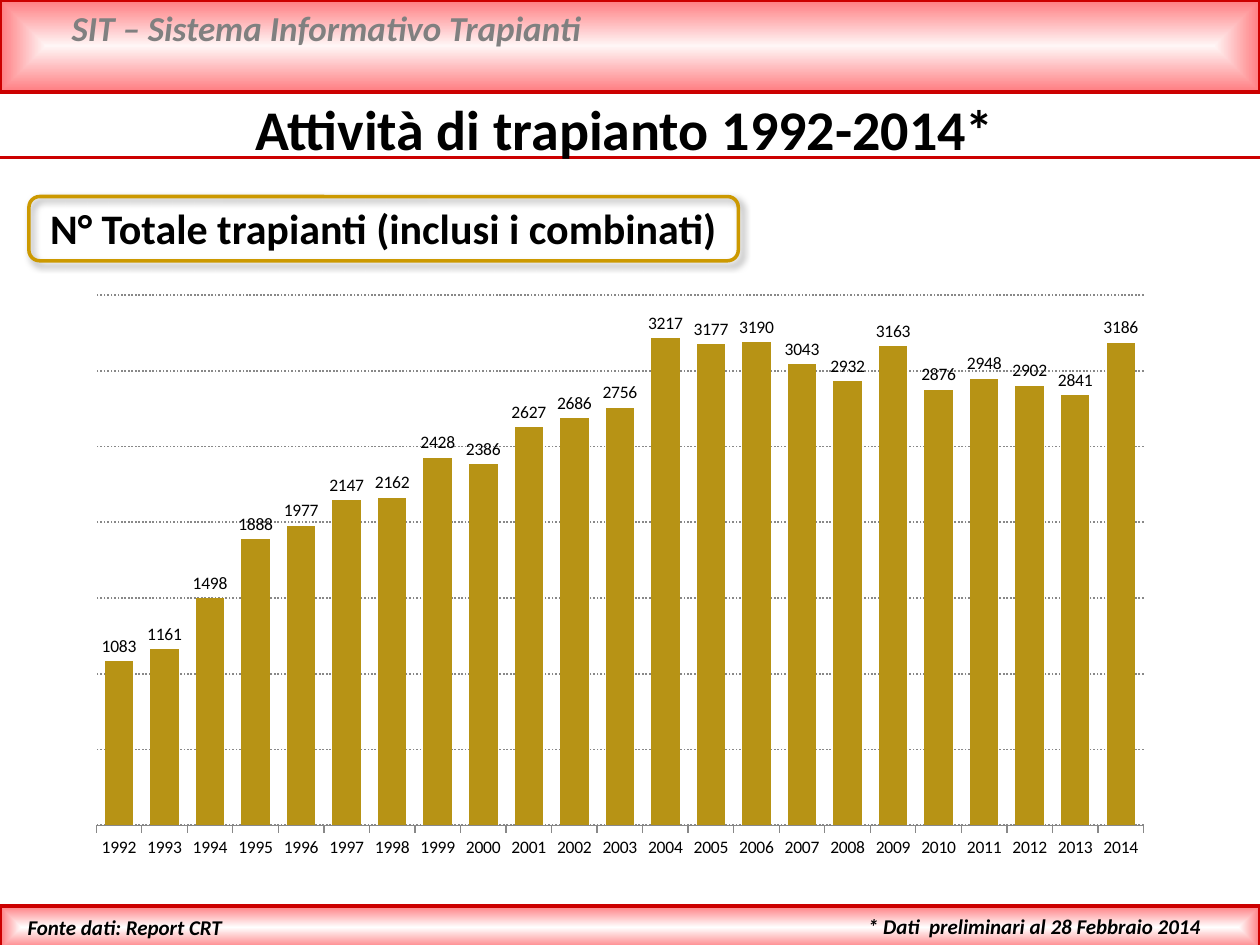
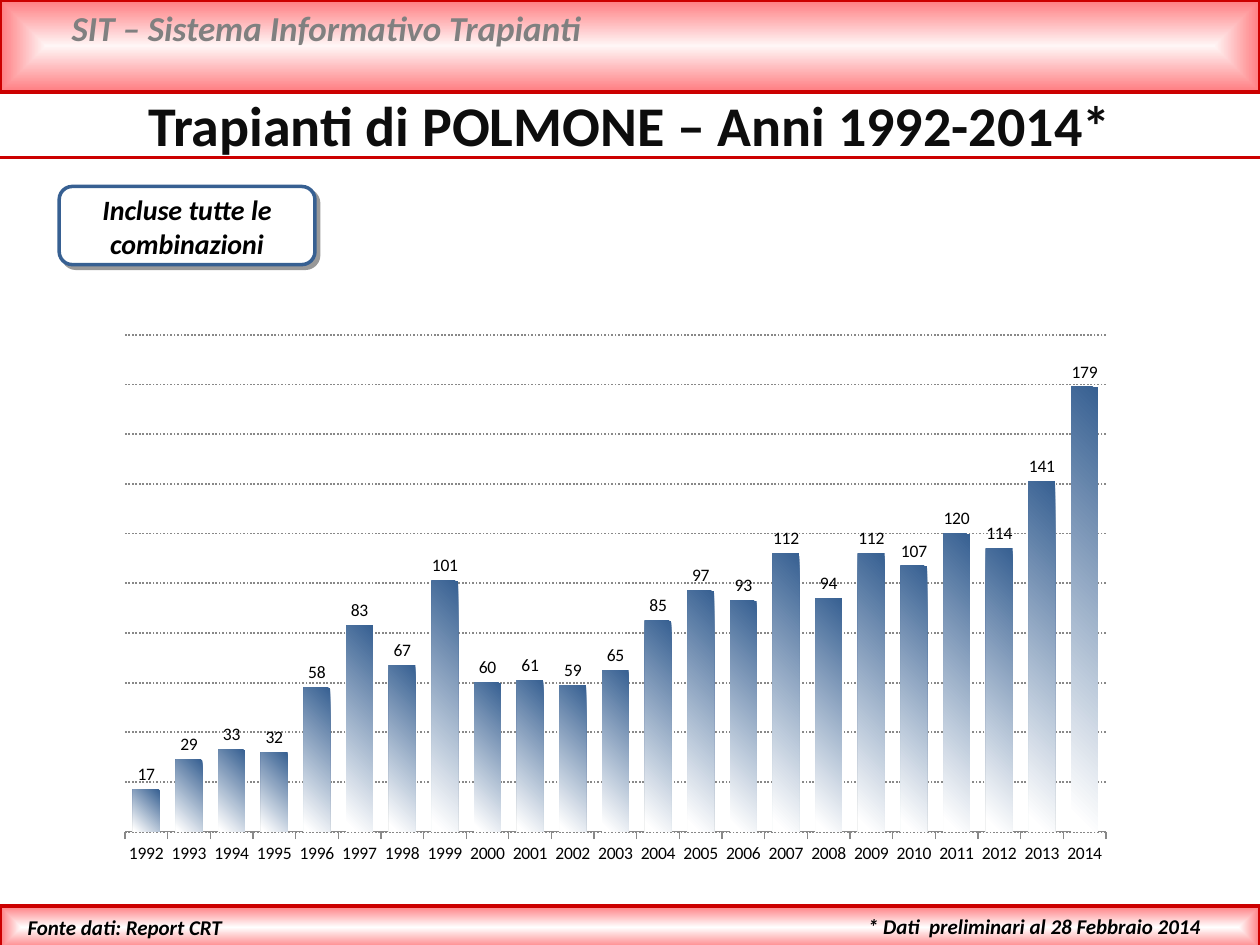
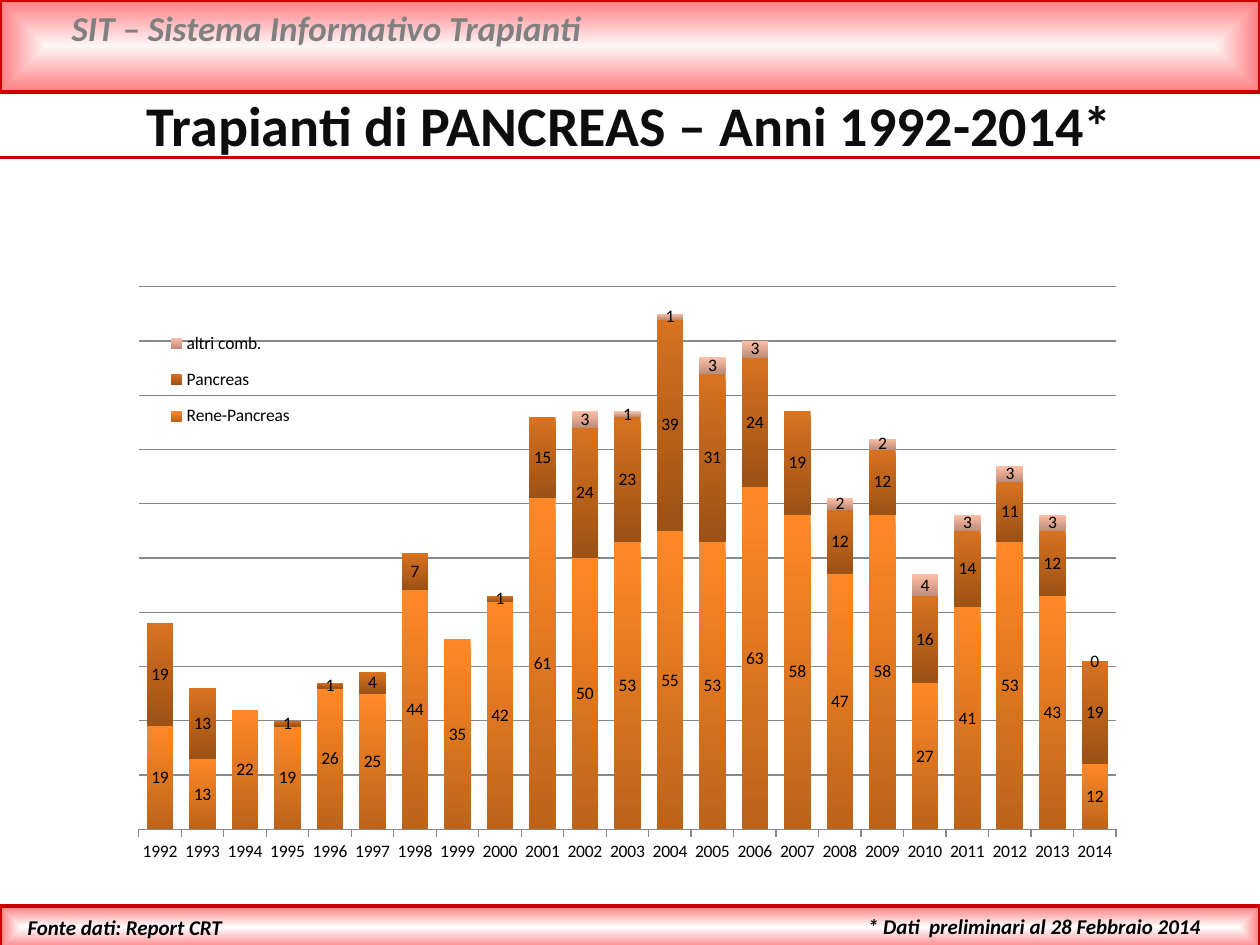
"""Build three slides on transplant activity in Italy, 1992-2014."""
from dataclasses import dataclass
from typing import NamedTuple, Optional

from lxml import etree
from pptx import Presentation
from pptx import util as u
from pptx.chart import data as chart_data
from pptx.dml import color as dml_color
from pptx.enum import chart as charts
from pptx.enum import dml, shapes, text
from pptx.oxml import ns

FONT = "Calibri"
CELL = u.Inches(0.1)
COLUMNS, ROWS = 100, 75
YEARS = [str(year) for year in range(1992, 2015)]
DOWNWARD, DOWN_LEFT = 270, 225
COLORS = {
    "white": "FFFFFF", "black": "000000", "title": "0D0D0D", "header": "808080",
    "red": "CC0000", "pink": "FF7C80", "pale pink": "FFF6F6", "grid": "888888",
    "gold": "CC9900", "gold bar": "B79315", "blue": "376092",
    "orange": "FF8826", "dark orange": "BC641A",
    "rust": "D8721F", "dark rust": "9C5115",
    "salmon": "FFBFA6", "dark salmon": "BE8E7C",
}


class Area(NamedTuple):
    """A rectangle in grid columns and rows, or in shares of a chart."""
    left: float
    top: float
    width: float
    height: float

    def lengths(self) -> list:
        """Return the four grid measures as slide lengths."""
        return [round(value * CELL) for value in self]


PLOT_SHARE = Area(0.02, 0.02, 0.96, 0.905)
LEGEND_SHARE = Area(0.04, 0.07, 0.14, 0.21)


@dataclass(frozen=True)
class Label:
    """A text box in one style."""
    words: str
    area: Area
    size: int
    color: str = "black"
    italic: bool = False
    centred: bool = False


@dataclass(frozen=True)
class Frame:
    """A rounded frame with a soft shadow."""
    area: Area
    line: str
    blur: int
    fill: Optional[str] = None


@dataclass(frozen=True)
class Bars:
    """One series of bars, in a plain colour or a gradient of two."""
    name: str
    values: list
    colors: tuple
    angle: int = DOWNWARD
    end: float = 1.0


@dataclass(frozen=True)
class Columns:
    """A column chart by year."""
    area: Area
    series: list
    top: int
    step: int
    stacked: bool = False


@dataclass(frozen=True)
class Page:
    """The content of one slide."""
    title: Label
    chart: Columns
    frame: Optional[Frame] = None
    note: Optional[Label] = None


BANDS = [(Area(0, 0, COLUMNS, 7.3), "pale pink"), (Area(0, 71.9, COLUMNS, 3.4), "white")]
SHARED_LABELS = [
    Label("SIT – Sistema Informativo Trapianti", Area(4.7, 0, 89.8, 4.4), 20, "header", True),
    Label("* Dati  preliminari al 28 Febbraio 2014", Area(67.9, 72, 32.1, 3), 12, italic=True),
    Label("Fonte dati: Report CRT", Area(1.2, 72.1, 32.1, 3), 12, italic=True),
]


def organ_title(organ: str) -> Label:
    """Return the title of a slide about one organ."""
    return Label(f"Trapianti di {organ} – Anni 1992-2014*", Area(0, 6.7, COLUMNS, 6.4),
                 32, "title", centred=True)


PAGES = [
    Page(
        Label("Attività di trapianto 1992-2014*", Area(0, 7, 99.2, 6.4), 32, centred=True),
        Columns(Area(5.9, 22.5, 86.6, 46.5), [
            Bars("Series 1", [1083, 1161, 1498, 1888, 1977, 2147, 2162, 2428, 2386, 2627, 2686,
                              2756, 3217, 3177, 3190, 3043, 2932, 3163, 2876, 2948, 2902, 2841,
                              3186], ("gold bar",)),
        ], 3500, 500),
        Frame(Area(2.3, 15.6, 56.3, 5.1), "gold", 4),
        Label("N° Totale trapianti (inclusi i combinati)", Area(3, 15.6, 55.6, 5.1), 24),
    ),
    Page(
        organ_title("POLMONE"),
        Columns(Area(8.3, 25.7, 81.1, 43.6), [
            Bars("Series 1", [17, 29, 33, 32, 58, 83, 67, 101, 60, 61, 59, 65, 85, 97, 93, 112,
                              94, 112, 107, 120, 114, 141, 179],
                 ("blue", "white"), DOWN_LEFT, 0.96),
        ], 200, 20),
        Frame(Area(4.7, 14.8, 20.3, 6.2), "blue", 0, "white"),
        Label("Incluse tutte le combinazioni", Area(4.7, 14.8, 20.3, 6.4), 16,
              italic=True, centred=True),
    ),
    Page(
        organ_title("PANCREAS"),
        Columns(Area(9.4, 21.8, 80.8, 47.6), [
            Bars("Rene-Pancreas", [19, 13, 22, 19, 26, 25, 44, 35, 42, 61, 50, 53, 55, 53, 63,
                                   58, 47, 58, 27, 41, 53, 43, 12], ("orange", "dark orange")),
            Bars("Pancreas", [19, 13, None, 1, 1, 4, 7, None, 1, 15, 24, 23, 39, 31, 24, 19, 12,
                              12, 16, 14, 11, 12, 19], ("rust", "dark rust")),
            Bars("altri comb.", [None] * 10 + [3, 1, 1, 3, 3, None, 2, 2, 4, 3, 3, 3, 0],
                 ("salmon", "dark salmon")),
        ], 100, 10, stacked=True),
    ),
]


def rgb(name: str) -> dml_color.RGBColor:
    """Return a named colour."""
    return dml_color.RGBColor.from_string(COLORS[name])


def draw_line(line, color: str, width: float) -> None:
    """Set the colour and width of a line."""
    line.color.rgb = rgb(color)
    line.width = u.Pt(width)


def paint(fill, colors: tuple, angle: int = DOWNWARD, end: float = 1.0) -> None:
    """Fill with one colour, or with a gradient between two."""
    if len(colors) == 1:
        fill.solid()
        fill.fore_color.rgb = rgb(colors[0])
        return
    fill.gradient()
    fill.gradient_angle = angle
    for stop, color, position in zip(fill.gradient_stops, colors, (0, end)):
        stop.color.rgb = rgb(color)
        stop.position = position


def add_band(slide, area: Area, centre: str) -> None:
    """Draw a band whose colour runs from its centre to its edges."""
    band = slide.shapes.add_shape(shapes.MSO_SHAPE.RECTANGLE, *area.lengths())
    band.shadow.inherit = False
    draw_line(band.line, "red", 2)
    paint(band.fill, (centre, "pink"))
    gradient = band.element.spPr.find(ns.qn("a:gradFill"))
    gradient.remove(gradient.find(ns.qn("a:lin")))
    route = etree.SubElement(gradient, ns.qn("a:path"), {"path": "shape"})
    etree.SubElement(route, ns.qn("a:fillToRect"), dict.fromkeys("ltrb", "50000"))


def add_rule(slide) -> None:
    """Draw the red rule under the title."""
    row = round(12.5 * CELL)
    rule = slide.shapes.add_connector(shapes.MSO_CONNECTOR.STRAIGHT, 0, row, COLUMNS * CELL, row)
    draw_line(rule.line, "red", 2)
    etree.SubElement(rule.element.spPr, ns.qn("a:effectLst"))


def add_label(slide, label: Label) -> None:
    """Write a bold text box."""
    box = slide.shapes.add_textbox(*label.area.lengths())
    frame = box.text_frame
    frame.word_wrap = True
    frame.auto_size = text.MSO_AUTO_SIZE.SHAPE_TO_FIT_TEXT
    para = frame.paragraphs[0]
    para.text = label.words
    para.alignment = text.PP_ALIGN.CENTER if label.centred else text.PP_ALIGN.LEFT
    font = para.font
    font.name, font.size, font.bold, font.italic = FONT, u.Pt(label.size), True, label.italic
    font.color.rgb = rgb(label.color)


def add_frame(slide, frame: Frame) -> None:
    """Draw a rounded frame and its shadow."""
    box = slide.shapes.add_shape(shapes.MSO_SHAPE.ROUNDED_RECTANGLE, *frame.area.lengths())
    box.shadow.inherit = False
    if frame.fill:
        paint(box.fill, (frame.fill,))
    else:
        box.fill.background()
    draw_line(box.line, frame.line, 2)
    effects = box.element.spPr.find(ns.qn("a:effectLst"))
    shadow = etree.SubElement(effects, ns.qn("a:outerShdw"), {
        "blurRad": str(u.Pt(frame.blur)), "dist": str(u.Pt(3)), "dir": "2700000",
        "algn": "tl", "rotWithShape": "0"})
    tone = etree.SubElement(shadow, ns.qn("a:srgbClr"), {"val": COLORS["black"]})
    etree.SubElement(tone, ns.qn("a:alpha"), {"val": "40000"})


def set_layout(parent, index: int, area: Area, inner: bool = False) -> None:
    """Fix the place of a chart part in shares of the chart."""
    old = parent.find(ns.qn("c:layout"))
    if old is not None:
        parent.remove(old)
    layout = etree.Element(ns.qn("c:layout"))
    manual = etree.SubElement(layout, ns.qn("c:manualLayout"))
    settings = {"layoutTarget": "inner"} if inner else {}
    settings |= {"xMode": "edge", "yMode": "edge"}
    settings |= {key: str(value) for key, value in zip("xywh", area)}
    for key, value in settings.items():
        etree.SubElement(manual, ns.qn(f"c:{key}"), {"val": value})
    parent.insert(index, layout)


def style_axes(chart, columns: Columns) -> None:
    """Show the years, and only the gridlines of the value axis."""
    years = chart.category_axis
    years.major_tick_mark = charts.XL_TICK_MARK.OUTSIDE
    years.has_major_gridlines = False
    draw_line(years.format.line, "grid", 0.75)
    values = chart.value_axis
    values.visible = False
    values.minimum_scale, values.maximum_scale = 0, columns.top
    values.major_unit = columns.step
    values.has_major_gridlines = True
    grid = values.major_gridlines.format.line
    draw_line(grid, "grid", 0.75 if columns.stacked else 1)
    if not columns.stacked:
        grid.dash_style = dml.MSO_LINE.ROUND_DOT


def add_columns(slide, columns: Columns) -> None:
    """Draw a column chart with its values."""
    table = chart_data.CategoryChartData()
    table.categories = YEARS
    for bars in columns.series:
        table.add_series(bars.name, bars.values)
    kinds, places = charts.XL_CHART_TYPE, charts.XL_LABEL_POSITION
    kind = kinds.COLUMN_STACKED if columns.stacked else kinds.COLUMN_CLUSTERED
    chart = slide.shapes.add_chart(kind, *columns.area.lengths(), table).chart
    chart.has_title = False
    chart.font.name, chart.font.size = FONT, u.Pt(10)
    chart.font.color.rgb = rgb("black")
    plot = chart.plots[0]
    plot.vary_by_categories = False
    plot.gap_width = 60
    plot.overlap = 100 if columns.stacked else -20
    for series, bars in zip(plot.series, columns.series):
        paint(series.format.fill, bars.colors, bars.angle, bars.end)
        series.invert_if_negative = False
        labels = series.data_labels
        labels.show_value = True
        labels.position = places.CENTER if columns.stacked else places.OUTSIDE_END
    style_axes(chart, columns)
    set_layout(chart.element.chart.plotArea, 0, PLOT_SHARE, inner=True)
    chart.has_legend = columns.stacked
    if columns.stacked:
        chart.legend.position = charts.XL_LEGEND_POSITION.LEFT
        chart.legend.include_in_layout = True
        set_layout(chart.element.chart.find(ns.qn("c:legend")), 1, LEGEND_SHARE)


def add_page(deck, page: Page) -> None:
    """Add one slide with the shared parts and its own content."""
    slide = deck.slides.add_slide(deck.slide_layouts[6])
    for area, centre in BANDS:
        add_band(slide, area, centre)
    add_rule(slide)
    for label in SHARED_LABELS + [page.title]:
        add_label(slide, label)
    if page.frame:
        add_frame(slide, page.frame)
    if page.note:
        add_label(slide, page.note)
    add_columns(slide, page.chart)


def main() -> None:
    """Build and save the deck."""
    deck = Presentation()
    deck.slide_width, deck.slide_height = COLUMNS * CELL, ROWS * CELL
    for page in PAGES:
        add_page(deck, page)
    deck.save("out.pptx")


if __name__ == "__main__":
    main()
